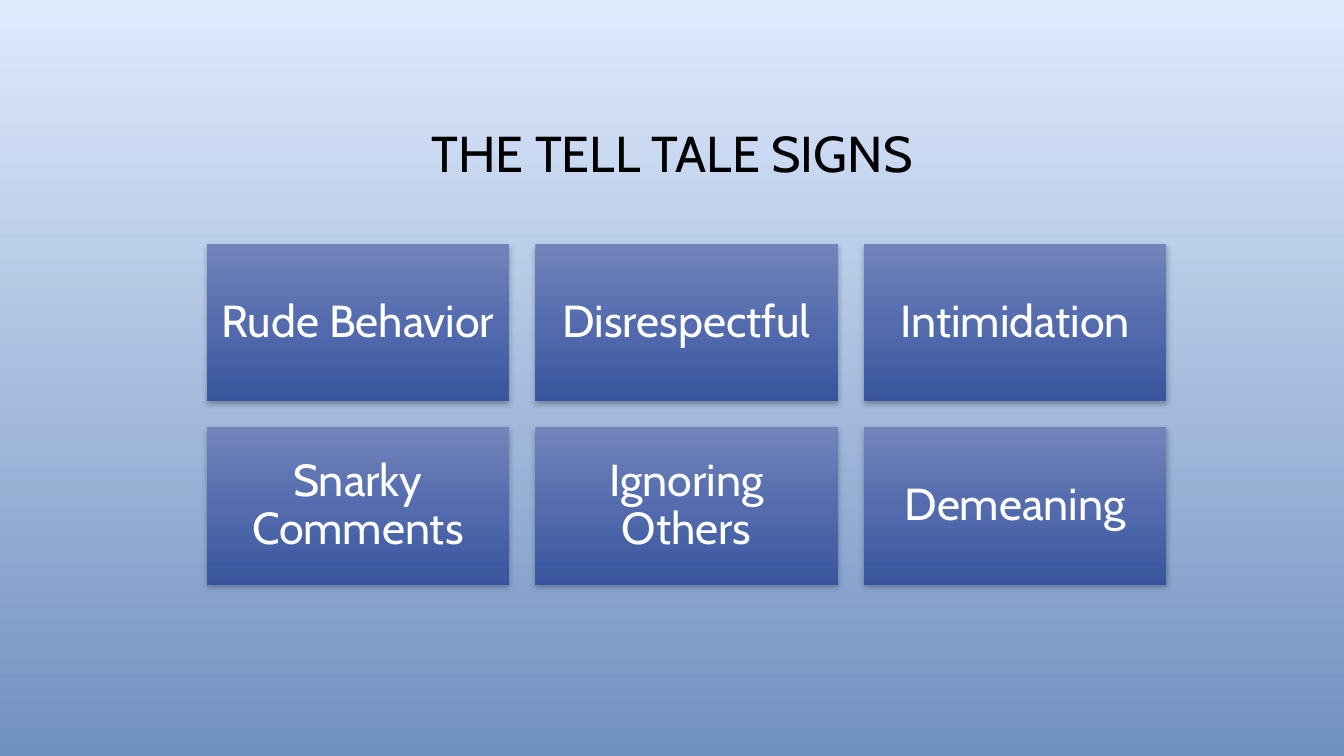
import copy
from dataclasses import dataclass

import lxml.etree
import pptx
import pptx.dml.color
import pptx.enum.shapes
import pptx.enum.text
import pptx.oxml.ns
import pptx.util

FONT = "Cabin"
SKY = [(0, "DFEBFD"), (1, "7191C0")]
TILE_FILL = [(0, "7284BA"), (0.5, "546CAE"), (1, "38559E")]


@dataclass(frozen=True)
class TileGrid:
    left: float = 2.05
    top: float = 2.42
    width: float = 3.0
    height: float = 1.56
    gap: float = 0.26
    columns: int = 3


@dataclass(frozen=True)
class Sign:
    text: str
    column: int
    row: int


LABELS = [
    "Rude Behavior", "Disrespectful", "Intimidation",
    "Snarky Comments", "Ignoring Others", "Demeaning",
]


def color(code: str) -> pptx.dml.color.RGBColor:
    return pptx.dml.color.RGBColor.from_string(code)


def paint_gradient(fill, owner, stops: list[tuple[float, str]]) -> None:
    fill.gradient()
    fill.gradient_angle = 270
    stop_list = owner.xpath(".//a:gsLst")[0]
    while len(stop_list) < len(stops):
        stop_list.append(copy.deepcopy(stop_list[-1]))
    for stop, (position, code) in zip(fill.gradient_stops, stops):
        stop.position = position
        stop.color.rgb = color(code)


def add_shadow(box) -> None:
    box.shadow.inherit = False
    tag = pptx.oxml.ns.qn
    effects = box.element.spPr.find(tag("a:effectLst"))
    shadow = lxml.etree.SubElement(
        effects, tag("a:outerShdw"),
        blurRad=str(pptx.util.Pt(4)), dist=str(pptx.util.Pt(2)),
        dir="5400000", algn="ctr", rotWithShape="0",
    )
    black = lxml.etree.SubElement(shadow, tag("a:srgbClr"), val="000000")
    lxml.etree.SubElement(black, tag("a:alpha"), val="28000")


def write_text(box, text: str, size: float, code: str) -> None:
    frame = box.text_frame
    frame.word_wrap = True
    frame.vertical_anchor = pptx.enum.text.MSO_ANCHOR.MIDDLE
    para = frame.paragraphs[0]
    para.text = text
    para.alignment = pptx.enum.text.PP_ALIGN.CENTER
    para.line_spacing = 0.9
    para.font.name = FONT
    para.font.size = pptx.util.Pt(size)
    para.font.color.rgb = color(code)


def add_title(page, text: str) -> None:
    title = page.shapes.title
    title.left, title.top, title.width, title.height = (
        pptx.util.Inches(value) for value in (1, 0.67, 11.33, 1.75)
    )
    write_text(title, text, 36, "000000")


def add_tile(page, grid: TileGrid, sign: Sign) -> None:
    box = page.shapes.add_shape(
        pptx.enum.shapes.MSO_SHAPE.RECTANGLE,
        pptx.util.Inches(grid.left + sign.column * (grid.width + grid.gap)),
        pptx.util.Inches(grid.top + sign.row * (grid.height + grid.gap)),
        pptx.util.Inches(grid.width),
        pptx.util.Inches(grid.height),
    )
    paint_gradient(box.fill, box.element, TILE_FILL)
    box.line.fill.background()
    add_shadow(box)
    frame = box.text_frame
    frame.margin_left = frame.margin_right = pptx.util.Inches(0.13)
    frame.margin_top = frame.margin_bottom = pptx.util.Inches(0.13)
    write_text(box, sign.text, 32, "FFFFFF")


def main() -> None:
    deck = pptx.Presentation()
    deck.slide_width = pptx.util.Inches(13.33)
    deck.slide_height = pptx.util.Inches(7.5)
    page = deck.slides.add_slide(deck.slide_layouts.get_by_name("Title Only"))
    paint_gradient(page.background.fill, page.element, SKY)
    add_title(page, "THE TELL TALE SIGNS")
    grid = TileGrid()
    for index, label in enumerate(LABELS):
        row, column = divmod(index, grid.columns)
        add_tile(page, grid, Sign(label, column, row))
    deck.save("out.pptx")


if __name__ == "__main__":
    main()
